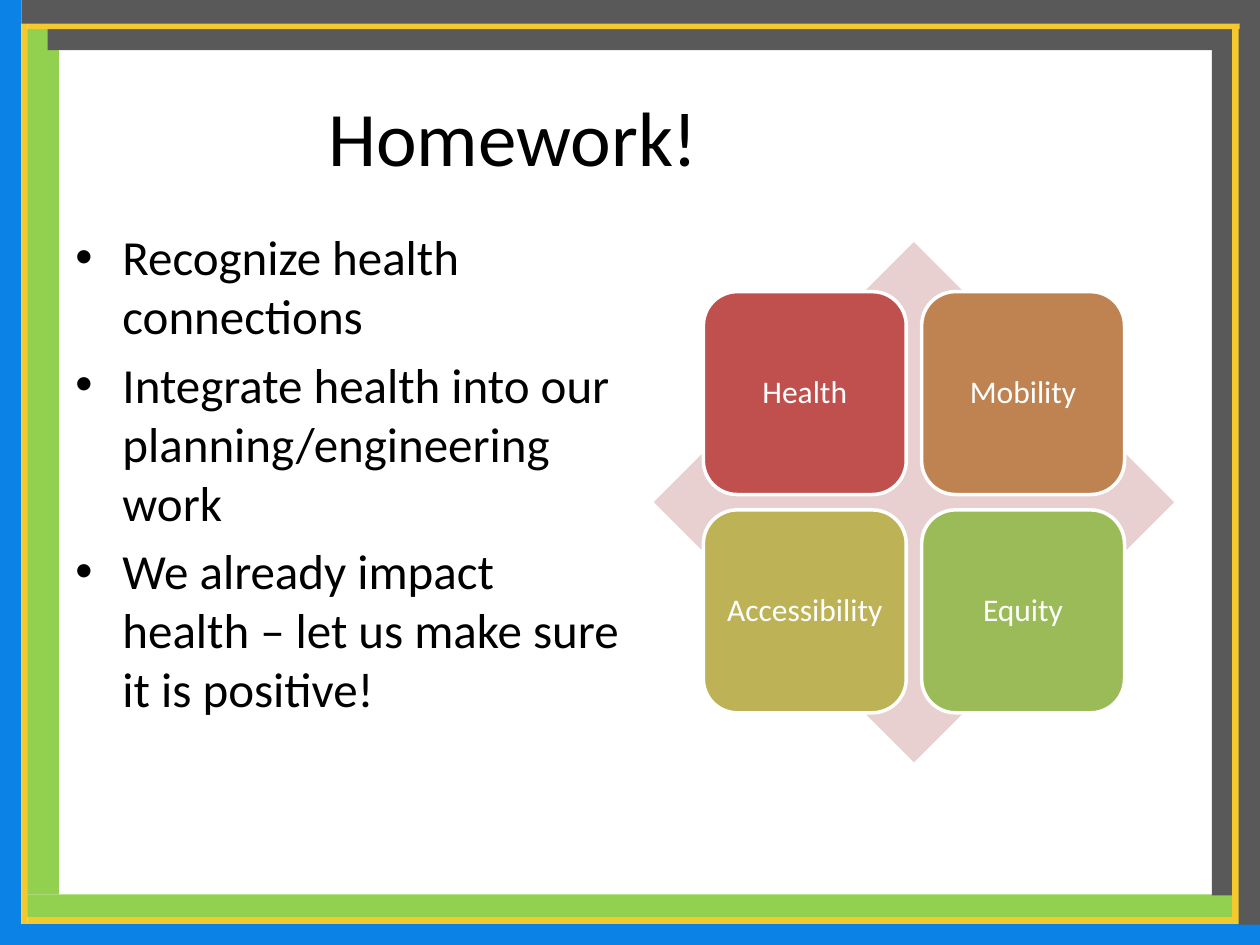
import pptx
import pptx.dml.color
import pptx.enum.shapes
import pptx.enum.text
import pptx.oxml
import pptx.oxml.ns
import pptx.util

Cm = pptx.util.Cm
Pt = pptx.util.Pt
Shape = pptx.enum.shapes.MSO_SHAPE
Align = pptx.enum.text.PP_ALIGN
Anchor = pptx.enum.text.MSO_ANCHOR

BLUE, GREEN, YELLOW, GREY = "0A82E6", "92D050", "F3C92D", "595959"

# left, top, width, height in cm, from back to front
FRAME_BARS = [
    (0, 0, 0.43, 19.1, BLUE),
    (0.2, 18.62, 25.2, 0.45, BLUE),
    (0.53, 0.58, 0.66, 17.45, GREEN),
    (0.53, 18.03, 24.33, 0.46, GREEN),
    (0.43, 0.46, 0.13, 18.16, YELLOW),
    (0.56, 18.49, 24.43, 0.13, YELLOW),
    (24.43, 0, 0.43, 18.05, GREY),
    (24.84, 0.46, 0.14, 18.03, YELLOW),
    (24.97, 0, 0.43, 18.64, GREY),
    (0.96, 0.58, 23.47, 0.43, GREY),
    (0.56, 0.46, 24.43, 0.13, YELLOW),
    (0.43, 0, 24.56, 0.48, GREY),
]

BULLETS = [
    "Recognize health connections",
    "Integrate health into our planning/engineering work",
    "We already impact health – let us make sure it is positive!",
]

TILES = [
    ("Health", "C0504D"),
    ("Mobility", "BE8351"),
    ("Accessibility", "BDB255"),
    ("Equity", "9BBB59"),
]


def color(value):
    return pptx.dml.color.RGBColor.from_string(value)


def style(para, size, text_color):
    para.font.name = "Calibri"
    para.font.size = Pt(size)
    para.font.color.rgb = color(text_color)


def add_filled(page, kind, left, top, width, height, fill):
    shape = page.shapes.add_shape(kind, Cm(left), Cm(top), Cm(width), Cm(height))
    shape.shadow.inherit = False
    shape.fill.solid()
    shape.fill.fore_color.rgb = color(fill)
    shape.line.fill.background()
    return shape


def add_text_box(page, left, top, width, height):
    box = page.shapes.add_textbox(Cm(left), Cm(top), Cm(width), Cm(height))
    box.text_frame.word_wrap = True
    return box.text_frame


def add_title(page, text):
    frame = add_text_box(page, 3.76, 1.02, 13.18, 3.43)
    frame.vertical_anchor = Anchor.MIDDLE
    para = frame.paragraphs[0]
    para.text = text
    para.alignment = Align.CENTER
    style(para, 44, "000000")


def add_bullet(para, indent):
    props = para._p.get_or_add_pPr()
    props.set("marL", str(Cm(indent)))
    props.set("indent", str(-Cm(indent)))
    namespace = pptx.oxml.ns.nsdecls("a")
    props.append(pptx.oxml.parse_xml(f'<a:buFont {namespace} typeface="Arial"/>'))
    props.append(pptx.oxml.parse_xml(f'<a:buChar {namespace} char="•"/>'))


def add_bullet_list(page, items):
    frame = add_text_box(page, 1.27, 4.45, 11.63, 12.57)
    for index, item in enumerate(items):
        para = frame.add_paragraph() if index else frame.paragraphs[0]
        para.text = item
        add_bullet(para, 0.95)
        if index:
            para.space_before = Pt(5.6)
        style(para, 28, "000000")


def add_tile(page, left, top, side, text, fill):
    tile = add_filled(page, Shape.ROUNDED_RECTANGLE, left, top, side, side, fill)
    tile.line.color.rgb = color("FFFFFF")
    tile.line.width = Pt(2)
    frame = tile.text_frame
    frame.word_wrap = True
    frame.vertical_anchor = Anchor.MIDDLE
    frame.margin_left = frame.margin_right = Cm(0.18)
    frame.margin_top = frame.margin_bottom = Cm(0.18)
    para = frame.paragraphs[0]
    para.text = text
    para.alignment = Align.CENTER
    para.line_spacing = 0.9
    style(para, 18, "FFFFFF")


def add_matrix(page):
    """Two by two tiles centred on a diamond."""
    left, top, size = 13.18, 4.88, 10.49
    side, pitch = 4.09, 4.4
    add_filled(page, Shape.DIAMOND, left, top, size, size, "E8D0D0")
    margin = (size - side - pitch) / 2
    for index, (text, fill) in enumerate(TILES):
        row, column = divmod(index, 2)
        add_tile(page, left + margin + column * pitch,
                 top + margin + row * pitch, side, text, fill)


def main():
    deck = pptx.Presentation()
    deck.slide_width, deck.slide_height = Cm(25.4), Cm(19.05)
    page = deck.slides.add_slide(deck.slide_layouts[6])
    for bar in FRAME_BARS:
        add_filled(page, Shape.RECTANGLE, *bar)
    add_title(page, "Homework!")
    add_bullet_list(page, BULLETS)
    add_matrix(page)
    deck.save("out.pptx")


if __name__ == "__main__":
    main()
